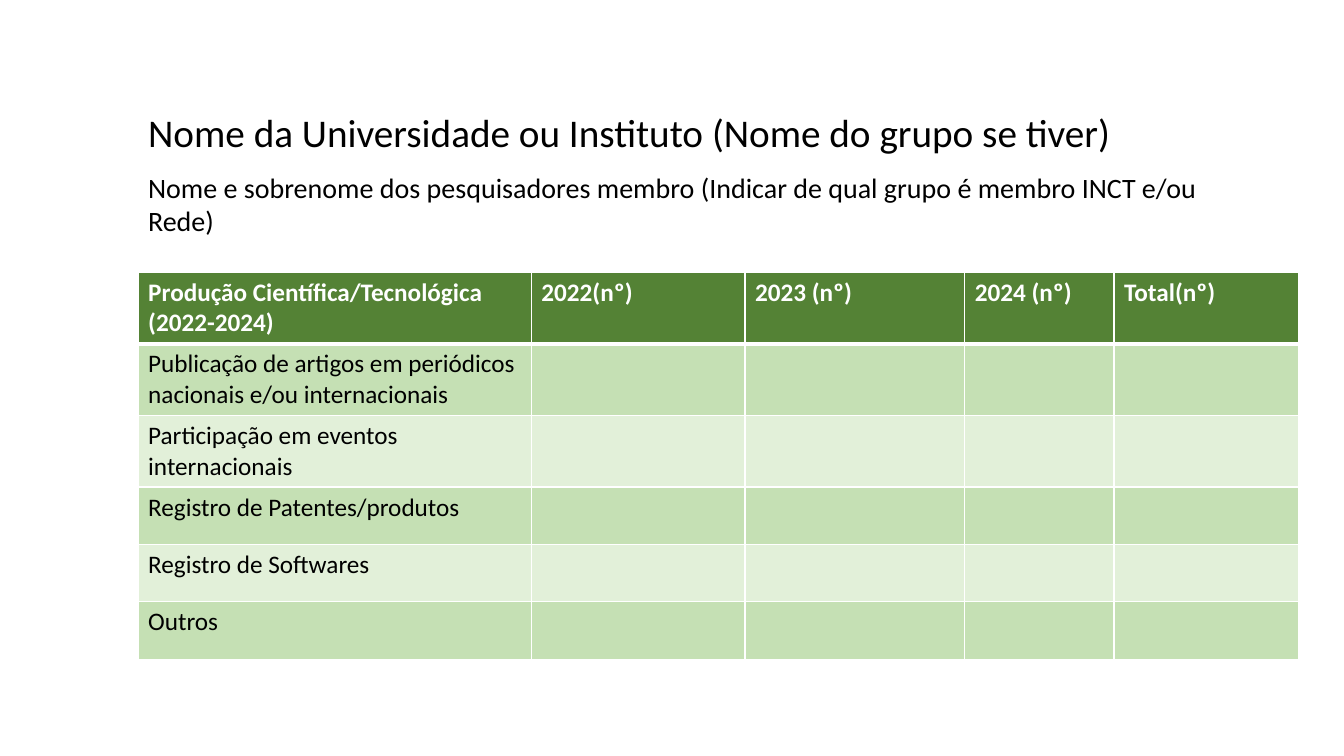
from pptx import Presentation, util as u
from pptx.dml.color import RGBColor
from pptx.enum import text
from pptx.oxml import parse_xml
from pptx.oxml.ns import nsdecls

BLACK, WHITE = "000000", "FFFFFF"
GREEN, BAND_DARK, BAND_LIGHT = "548235", "C5E0B4", "E2F0D9"


def color(value):
    return RGBColor.from_string(value)


class SlideBuilder:
    font_name = "Calibri"

    def __init__(self, presentation):
        self.slide = presentation.slides.add_slide(presentation.slide_layouts[5])

    def fill_text(self, frame, content, size, ink=BLACK, bold=False):
        frame.text = content
        for paragraph in frame.paragraphs:
            paragraph.alignment = text.PP_ALIGN.LEFT
            paragraph.line_spacing = 1.0
            font = paragraph.font
            font.name, font.size, font.bold = self.font_name, u.Pt(size), bold
            font.color.rgb = color(ink)

    def format_box(self, shape, content, size):
        frame = shape.text_frame
        frame.word_wrap = True
        frame.auto_size = text.MSO_AUTO_SIZE.NONE
        frame.vertical_anchor = text.MSO_ANCHOR.TOP
        self.fill_text(frame, content, size)

    def title(self, content, left, top, width, height, size):
        shape = self.slide.shapes.title
        shape.left, shape.top = u.Inches(left), u.Inches(top)
        shape.width, shape.height = u.Inches(width), u.Inches(height)
        self.format_box(shape, content, size)

    def text_box(self, content, left, top, width, height, size):
        shape = self.slide.shapes.add_textbox(
            u.Inches(left), u.Inches(top), u.Inches(width), u.Inches(height))
        self.format_box(shape, content, size)

    def borders(self, cell, top, bottom):
        properties = cell._tc.get_or_add_tcPr()
        sides = {"lnL": 1, "lnR": 1, "lnT": top, "lnB": bottom}
        for position, (tag, points) in enumerate(sides.items()):
            properties.insert(position, parse_xml(
                f'<a:{tag} {nsdecls("a")} w="{u.Pt(points)}"><a:solidFill>'
                f'<a:srgbClr val="{WHITE}"/></a:solidFill></a:{tag}>'))

    def table(self, headers, labels, left, top, widths, heights, size):
        table = self.slide.shapes.add_table(
            len(heights), len(widths), u.Inches(left), u.Inches(top),
            u.Inches(sum(widths)), u.Inches(sum(heights))).table
        for column, width in zip(table.columns, widths):
            column.width = u.Inches(width)
        rows = [headers] + [[label] + [""] * (len(widths) - 1) for label in labels]
        for i, (row, height) in enumerate(zip(rows, heights)):
            table.rows[i].height = u.Inches(height)
            fill = GREEN if i == 0 else BAND_DARK if i % 2 else BAND_LIGHT
            for j, content in enumerate(row):
                cell = table.cell(i, j)
                self.fill_text(cell.text_frame, content, size,
                               BLACK if i else WHITE, bold=i == 0)
                cell.fill.solid()
                cell.fill.fore_color.rgb = color(fill)
                self.borders(cell, 3 if i == 1 else 1, 3 if i == 0 else 1)


def main():
    presentation = Presentation()
    presentation.slide_width = u.Inches(13.33)
    presentation.slide_height = u.Inches(7.5)
    builder = SlideBuilder(presentation)

    # Institution and researchers
    builder.title("Nome da Universidade ou Instituto (Nome do grupo se tiver)",
                  1.37, 1.02, 11.61, 0.57, 28)
    builder.text_box("Nome e sobrenome dos pesquisadores membro "
                     "(Indicar de qual grupo é membro INCT e/ou Rede)",
                     1.37, 1.64, 11.2, 0.44, 20)

    # Production by year
    builder.table(
        ["Produção Científica/Tecnológica\n(2022-2024)", "2022(nº)",
         "2023 (nº)", "2024 (nº)", "Total(nº)"],
        ["Publicação de artigos em periódicos nacionais e/ou internacionais",
         "Participação em eventos internacionais",
         "Registro de Patentes/produtos", "Registro de Softwares", "Outros"],
        1.37, 2.7, [3.9, 2.12, 2.18, 1.48, 1.83], [0.7] * 3 + [0.57] * 3, 18)

    presentation.save("out.pptx")


if __name__ == "__main__":
    main()
